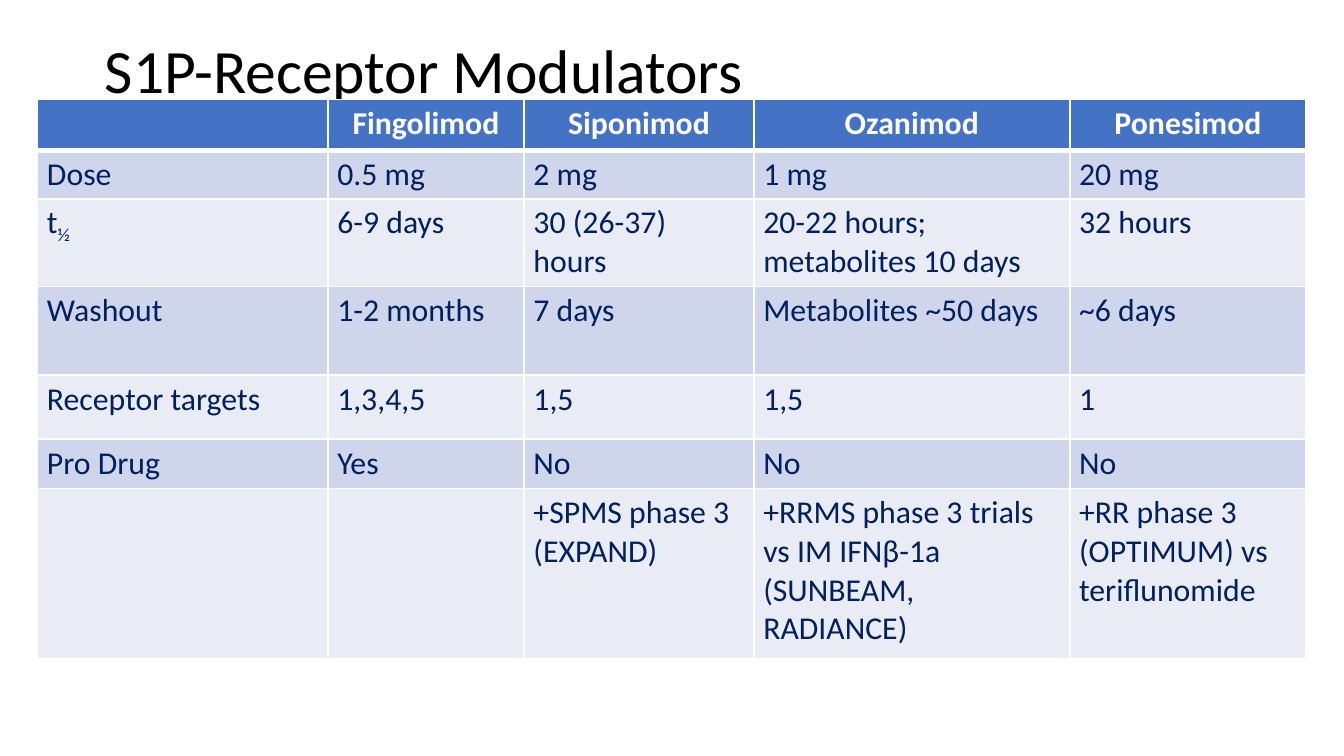
"""Build a slide comparing four S1P-receptor modulators in a table."""
from lxml.etree import SubElement
from pptx import Presentation
from pptx.dml.color import RGBColor
from pptx.enum.text import MSO_ANCHOR, PP_ALIGN
from pptx.oxml.ns import qn
from pptx.util import Inches, Pt

COLORS = {
    "title": "000000",
    "header": "4472C4",
    "header_text": "FFFFFF",
    "rule": "FFFFFF",
    "odd_row": "CFD5EA",
    "even_row": "E9EBF5",
    "body_text": "002060",
}

deck = Presentation()
deck.slide_width = Inches(10)
deck.slide_height = deck.slide_width * 9 // 16
unit = deck.slide_width / 100


def grid(count):
    return round(count * unit)


def write(paragraph, text, size=17, color="body_text", bold=False, align=PP_ALIGN.LEFT, baseline=None):
    paragraph.alignment = align
    run = paragraph.add_run()
    run.text = text
    run.font.name = "Calibri"
    run.font.size = Pt(size)
    run.font.bold = bold
    run.font.color.rgb = RGBColor.from_string(COLORS[color])
    if baseline:
        run._r.get_or_add_rPr().set("baseline", str(baseline * 1000))


slide = deck.slides.add_slide(deck.slide_layouts[5])
heading = slide.shapes.title
heading.left, heading.top, heading.width, heading.height = grid(6.9), 0, grid(86.2), grid(10.9)
heading.text_frame.vertical_anchor = MSO_ANCHOR.MIDDLE
heading.text_frame.margin_left = grid(0.9)
heading.text_frame.paragraphs[0].line_spacing = 0.9
write(heading.text_frame.paragraphs[0], "S1P-Receptor Modulators", size=33, color="title")

comparison = [
    ["", "Fingolimod", "Siponimod", "Ozanimod", "Ponesimod"],
    ["Dose", "0.5 mg", "2 mg", "1 mg", "20 mg"],
    ["t", "6-9 days", "30 (26-37) hours", "20-22 hours; metabolites 10 days", "32 hours"],
    ["Washout", "1-2 months", "7 days", "Metabolites ~50 days", "~6 days"],
    ["Receptor targets", "1,3,4,5", "1,5", "1,5", "1"],
    ["Pro Drug", "Yes", "No", "No", "No"],
    ["", "", "+SPMS phase 3 (EXPAND)", "+RRMS phase 3 trials vs IM IFNβ-1a (SUNBEAM, RADIANCE)",
     "+RR phase 3 (OPTIMUM) vs teriflunomide"],
]
column_widths = [21.6, 14.6, 17.1, 23.5, 17.6]
row_heights = [3.76, 3.62, 6.52, 6.6, 4.76, 3.68, 12.7]

modulators = slide.shapes.add_table(
    len(row_heights), len(column_widths), grid(2.8), grid(7.4),
    grid(sum(column_widths)), grid(sum(row_heights))).table
for column, width in zip(modulators.columns, column_widths):
    column.width = grid(width)

for index, (row, height, entries) in enumerate(zip(modulators.rows, row_heights, comparison)):
    row.height = grid(height)
    is_header = index == 0
    band = "header" if is_header else "odd_row" if index % 2 else "even_row"
    for cell, entry in zip(row.cells, entries):
        cell.margin_left = cell.margin_right = grid(0.7)
        cell.margin_top = cell.margin_bottom = grid(0.36)
        if is_header:
            rule = SubElement(cell._tc.get_or_add_tcPr(), qn("a:lnB"), w=str(Pt(3)))
            SubElement(SubElement(rule, qn("a:solidFill")), qn("a:srgbClr"), val=COLORS["rule"])
        cell.fill.solid()
        cell.fill.fore_color.rgb = RGBColor.from_string(COLORS[band])
        if entry:
            write(cell.text_frame.paragraphs[0], entry, bold=is_header,
                  color="header_text" if is_header else "body_text",
                  align=PP_ALIGN.CENTER if is_header else PP_ALIGN.LEFT)

half_life_label = modulators.cell(2, 0).text_frame.paragraphs[0]
write(half_life_label, "½", baseline=-25)

deck.save("out.pptx")
